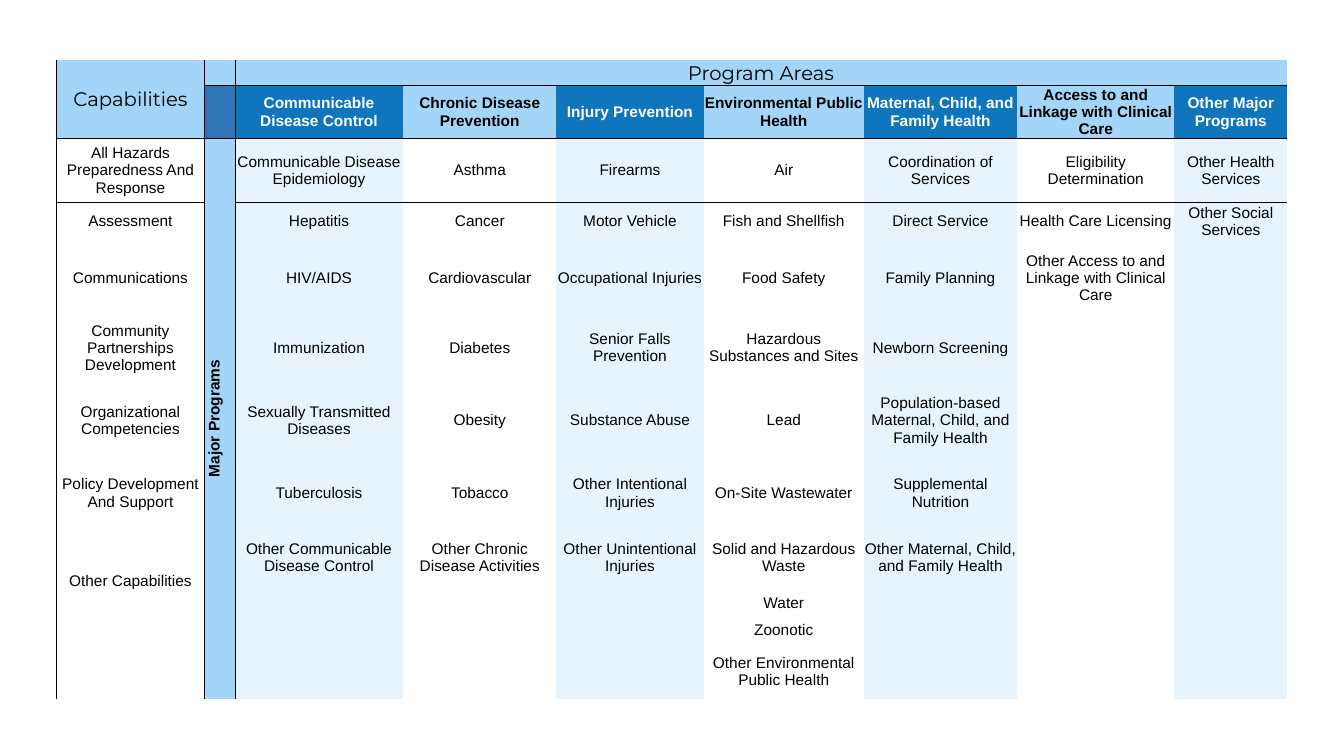
import pptx
import pptx.util
import pptx.dml.color
import pptx.enum.text
import pptx.oxml.ns
import lxml.etree

HUES = {"black": "000000", "white": "FFFFFF", "sky": "A2D5F8",
        "steel": "2F75B5", "deep": "0F75BC", "pale": "E7F4FD"}
PLAIN = "{2D5ABB26-0587-4C30-8999-92F81FD0307C}"

# Relative column widths and row heights
COLS = [1.47, 0.3, 1.67, 1.52, 1.46, 1.59, 1.52, 1.56, 1.12]
ROWS = [0.2, 0.49, 0.64, 0.37, 0.75, 0.64, 0.8, 0.64, 0.64, 0.27, 0.26, 0.56]

SKILLS = ["All Hazards Preparedness And Response", "Assessment", "Communications",
          "Community Partnerships Development", "Organizational Competencies",
          "Policy Development And Support", "Other Capabilities"]

# Each program area with its major programs
AREAS = {
    "Communicable Disease Control": [
        "Communicable Disease Epidemiology", "Hepatitis", "HIV/AIDS", "Immunization",
        "Sexually Transmitted Diseases", "Tuberculosis",
        "Other Communicable Disease Control"],
    "Chronic Disease Prevention": [
        "Asthma", "Cancer", "Cardiovascular", "Diabetes", "Obesity", "Tobacco",
        "Other Chronic Disease Activities"],
    "Injury Prevention": [
        "Firearms", "Motor Vehicle", "Occupational Injuries", "Senior Falls Prevention",
        "Substance Abuse", "Other Intentional Injuries", "Other Unintentional Injuries"],
    "Environmental Public Health": [
        "Air", "Fish and Shellfish", "Food Safety", "Hazardous Substances and Sites",
        "Lead", "On-Site Wastewater", "Solid and Hazardous Waste", "Water", "Zoonotic",
        "Other Environmental Public Health"],
    "Maternal, Child, and Family Health": [
        "Coordination of Services", "Direct Service", "Family Planning",
        "Newborn Screening", "Population-based Maternal, Child, and Family Health",
        "Supplemental Nutrition", "Other Maternal, Child, and Family Health"],
    "Access to and Linkage with Clinical Care": [
        "Eligibility Determination", "Health Care Licensing",
        "Other Access to and Linkage with Clinical Care"],
    "Other Major Programs": ["Other Health Services", "Other Social Services"],
}


class Deck:
    """Holds the style and the current slide."""
    font, head = "Arial", "Montserrat"
    size, big = 11, 14

    def __init__(self, wide, high):
        self.show = pptx.Presentation()
        self.show.slide_width = pptx.util.Inches(wide)
        self.show.slide_height = pptx.util.Inches(high)
        self.slide = self.show.slides.add_slide(self.show.slide_layouts[6])

    def table(self, left, top, wide, high, cols, rows):
        """Place a plain table; lengths are shares of the slide."""
        full_w, full_h = self.show.slide_width, self.show.slide_height
        frame = self.slide.shapes.add_table(
            len(rows), len(cols), int(left * full_w), int(top * full_h),
            int(wide * full_w), int(high * full_h))
        grid = frame.table
        grid.first_row = grid.horz_banding = False
        grid._tbl.tblPr.find(pptx.oxml.ns.qn("a:tableStyleId")).text = PLAIN
        for col, part in zip(grid.columns, cols):
            col.width = int(wide * full_w * part / sum(cols))
        for row, part in zip(grid.rows, rows):
            row.height = int(high * full_h * part / sum(rows))
        return grid

    def cell(self, cell, text, fill, edges, ink="black", bold=False, head=False,
             low=False):
        """Style one cell; edges is a string of the sides L, R, T, B."""
        anchor = pptx.enum.text.MSO_ANCHOR
        cell.margin_left = cell.margin_right = cell.margin_top = pptx.util.Inches(0.01)
        cell.margin_bottom = 0
        cell.vertical_anchor = anchor.BOTTOM if low else anchor.MIDDLE
        for side in edges:
            self.edge(cell, side)
        cell.fill.solid()
        cell.fill.fore_color.rgb = self.hue(fill)
        para = cell.text_frame.paragraphs[0]
        para.alignment = pptx.enum.text.PP_ALIGN.CENTER
        if text:
            run = para.add_run()
            run.text = text
            run.font.name = self.head if head else self.font
            run.font.size = pptx.util.Pt(self.big if head else self.size)
            run.font.bold = bold
            run.font.color.rgb = self.hue(ink)
        else:  # keep blank cells from stretching short rows
            lxml.etree.SubElement(para._p, pptx.oxml.ns.qn("a:endParaRPr"),
                                  sz=str(self.size * 100))

    def edge(self, cell, side):
        name = pptx.oxml.ns.qn
        line = lxml.etree.SubElement(cell._tc.get_or_add_tcPr(), name("a:ln" + side),
                                     w=str(pptx.util.Pt(0.5)))
        solid = lxml.etree.SubElement(line, name("a:solidFill"))
        lxml.etree.SubElement(solid, name("a:srgbClr"), val=HUES["black"])

    def hue(self, name):
        return pptx.dml.color.RGBColor.from_string(HUES[name])


def main():
    deck = Deck(13.33, 7.5)
    grid = deck.table(0.042, 0.08, 0.916, 0.835, COLS, ROWS)
    last = len(ROWS) - 1

    # Merged headings
    grid.cell(0, 0).merge(grid.cell(1, 0))
    grid.cell(0, 2).merge(grid.cell(0, len(COLS) - 1))
    grid.cell(2, 1).merge(grid.cell(last, 1))

    # Capabilities column
    deck.cell(grid.cell(0, 0), "Capabilities", "sky", "LRB", head=True)
    deck.cell(grid.cell(1, 0), "", "sky", "LRB")
    for row in range(2, last + 1):
        text = SKILLS[row - 2] if row - 2 < len(SKILLS) else ""
        deck.cell(grid.cell(row, 0), text, "white", "LRT" if row == 2 else "LR",
                  low=text == SKILLS[-1])

    # Narrow side band
    deck.cell(grid.cell(0, 1), "", "sky", "LB")
    deck.cell(grid.cell(1, 1), "", "steel", "LTB")
    for row in range(2, last + 1):
        deck.cell(grid.cell(row, 1), "Major Programs" if row == 2 else "", "sky",
                  "LT" if row == 2 else "L", bold=True)
    grid.cell(2, 1)._tc.get_or_add_tcPr().set("vert", "vert270")

    # Program areas in alternating shades
    for col, (area, items) in enumerate(AREAS.items(), 2):
        dark = col % 2 == 0
        deck.cell(grid.cell(0, col), "Program Areas" if col == 2 else "", "sky", "B",
                  head=True, low=True)
        deck.cell(grid.cell(1, col), area, "deep" if dark else "sky", "TB",
                  ink="white" if dark else "black", bold=True)
        for row in range(2, last + 1):
            text = items[row - 2] if row - 2 < len(items) else ""
            deck.cell(grid.cell(row, col), text, "pale" if dark else "white",
                      "T" if row == 2 else "")

    deck.show.save("out.pptx")


if __name__ == "__main__":
    main()
